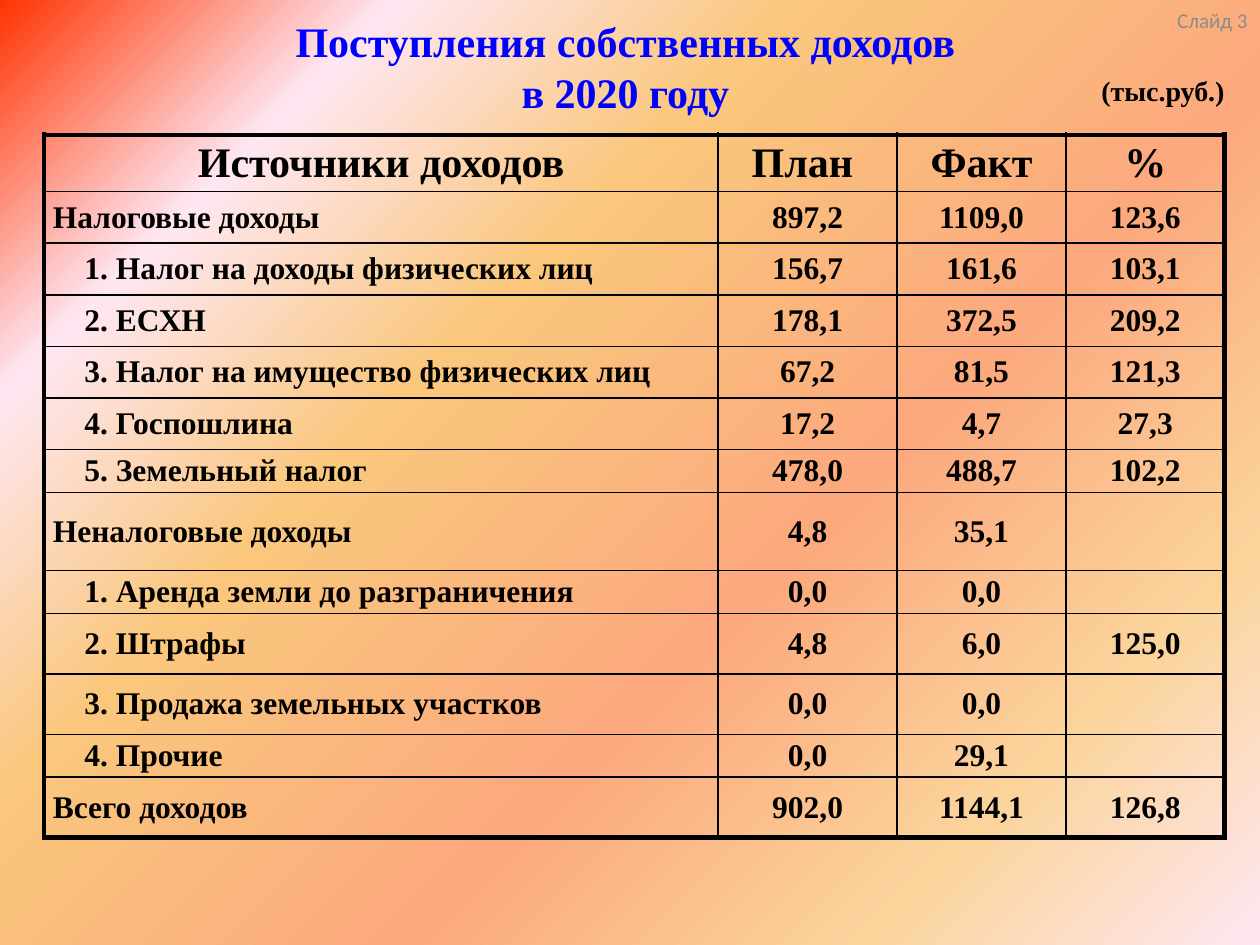
"""Build a slide with a table of own revenues for 2020."""
from lxml.etree import SubElement
from pptx import Presentation
from pptx.dml.color import RGBColor
from pptx.enum.text import MSO_ANCHOR, PP_ALIGN
from pptx.oxml.ns import qn
from pptx.util import Inches, Pt

C = {"black": "000000", "title": "0000FF", "number": "8C8C8C"}
STOPS = [(0, "FF3300"), (18, "FEE7F2"), (36, "FAC77D"),
         (61, "FBA97D"), (82, "FBD49C"), (100, "FEE7F2")]
SERIF = "Times New Roman"


def write(tf, text, size=18, font=SERIF, color="black", bold=True,
          align=PP_ALIGN.CENTER):
    p = tf.paragraphs[0]
    p.text = text
    p.alignment = align
    p.font.size = Pt(size)
    for r in p.runs:
        r.font.name = font
        r.font.size = Pt(size)
        r.font.bold = bold
        r.font.color.rgb = RGBColor.from_string(C[color])


prs = Presentation()
prs.slide_width, prs.slide_height = Inches(10), Inches(7.5)
U = prs.slide_width // 1000
s = prs.slides.add_slide(prs.slide_layouts[6])

fill = s.background.fill
fill.gradient()
fill.gradient_angle = 315
gs_list = s.background._cSld.find(".//" + qn("a:gsLst"))
for gs in list(gs_list):
    gs_list.remove(gs)
for pos, color in STOPS:
    gs = SubElement(gs_list, qn("a:gs"), pos=str(pos * 1000))
    SubElement(gs, qn("a:srgbClr"), val=color)

labels = [
    ((28, 13, 945, 79), MSO_ANCHOR.MIDDLE, "Поступления собственных доходов \vв 2020 году ",
     dict(size=24, color="title")),
    ((862, 52, 122, 39), MSO_ANCHOR.MIDDLE, "(тыс.руб.)", dict(size=16)),
    ((917, 0, 83, 52), MSO_ANCHOR.TOP, "Слайд 3",
     dict(size=12, font="Calibri", color="number", bold=False, align=PP_ALIGN.RIGHT)),
]
for at, anchor, text, fmt in labels:
    tf = s.shapes.add_textbox(*(n * U for n in at)).text_frame
    tf.word_wrap = True
    tf.vertical_anchor = anchor
    tf.margin_top = tf.margin_bottom = 6 * U
    write(tf, text, **fmt)

cols = [535, 142, 134, 126]
rows = [
    (45, "Источники доходов", "План ", "Факт", "%"),
    (41, "Налоговые доходы", "897,2", "1109,0", "123,6"),
    (41, "1. Налог на доходы физических лиц", "156,7", "161,6", "103,1"),
    (41, "2. ЕСХН", "178,1", "372,5", "209,2"),
    (41, "3. Налог на имущество физических лиц", "67,2", "81,5", "121,3"),
    (41, "4. Госпошлина", "17,2", "4,7", "27,3"),
    (34, "5. Земельный налог", "478,0", "488,7", "102,2"),
    (62, "Неналоговые доходы", "4,8", "35,1", ""),
    (34, "1. Аренда земли до разграничения", "0,0", "0,0", ""),
    (48, "2. Штрафы", "4,8", "6,0", "125,0"),
    (48, "3. Продажа земельных участков", "0,0", "0,0", ""),
    (34, "4. Прочие", "0,0", "29,1", ""),
    (48, "Всего доходов", "902,0", "1144,1", "126,8"),
]
row_lines = [3] + [1] * (len(rows) - 1) + [3]
row_lines[9] = row_lines[11] = 0.5
col_lines = [3, 1, 1, 1, 3]

table = s.shapes.add_table(len(rows), len(cols), 35 * U, 107 * U,
                           sum(cols) * U, sum(row[0] for row in rows) * U).table
table.horz_banding = table.first_row = False
for col, width in zip(table.columns, cols):
    col.width = width * U
for i, (height, *texts) in enumerate(rows):
    table.rows[i].height = height * U
    for j, text in enumerate(texts):
        cell = table.cell(i, j)
        cell.vertical_anchor = MSO_ANCHOR.MIDDLE
        cell.margin_left = cell.margin_right = 7 * U
        cell.margin_top = cell.margin_bottom = 0
        if j == 0 and text[0].isdigit():
            cell.margin_left = 32 * U
        edges = {"L": col_lines[j], "R": col_lines[j + 1],
                 "T": row_lines[i], "B": row_lines[i + 1]}
        for side, width in edges.items():
            ln = SubElement(cell._tc.get_or_add_tcPr(), qn("a:ln" + side), w=str(Pt(width)))
            SubElement(SubElement(ln, qn("a:solidFill")), qn("a:srgbClr"), val=C["black"])
        cell.fill.background()
        write(cell.text_frame, text, size=18 if i else 24,
              align=PP_ALIGN.JUSTIFY if i and j == 0 else PP_ALIGN.CENTER)

prs.save("out.pptx")
